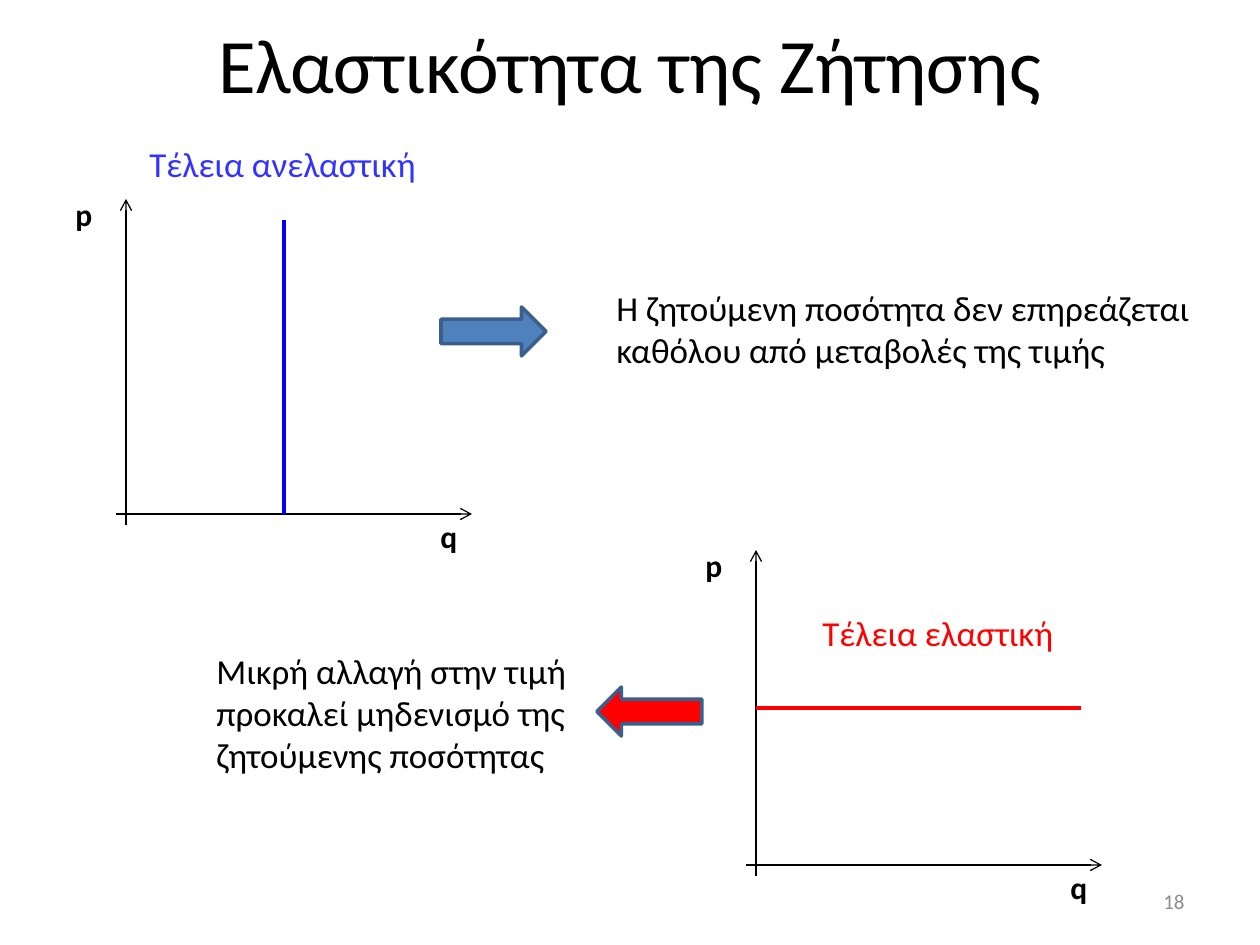
from dataclasses import dataclass

from lxml import etree
from pptx import Presentation
from pptx.dml.color import RGBColor
from pptx.enum.shapes import MSO_CONNECTOR, MSO_SHAPE
from pptx.enum.text import MSO_ANCHOR, PP_ALIGN
from pptx.oxml.ns import qn
from pptx.util import Emu, Pt

STRAIGHT = MSO_CONNECTOR.STRAIGHT
RIGHT_ARROW = MSO_SHAPE.RIGHT_ARROW
TOP, MIDDLE = MSO_ANCHOR.TOP, MSO_ANCHOR.MIDDLE
LEFT, CENTER, RIGHT = PP_ALIGN.LEFT, PP_ALIGN.CENTER, PP_ALIGN.RIGHT

PX_PER_INCH = 126
FONT = "Calibri"
COLORS = {
    "black": "000000",
    "grey": "8C8C8C",
    "curve_blue": "0000FF",
    "label_blue": "3333FF",
    "red": "FF0000",
    "arrow_blue": "4F81BD",
    "arrow_edge": "3A5F8C",
}


@dataclass(frozen=True)
class Label:
    text: str
    left: int
    top: int
    width: int
    height: int
    size: int = 20
    color: str = "black"
    bold: bool = False
    wrap: bool = True
    align: PP_ALIGN = LEFT
    anchor: MSO_ANCHOR = TOP


@dataclass(frozen=True)
class Line:
    start: tuple[int, int]
    end: tuple[int, int]
    color: str = "black"
    weight: float = 0.75
    arrow: bool = False


@dataclass(frozen=True)
class BlockArrow:
    left: int
    top: int
    color: str
    rotation: int = 0


ORIGINS = [(126, 514), (756, 865)]
CURVES = [
    Line((284, 220), (284, 514), "curve_blue", 2),
    Line((756, 708), (1081, 708), "red", 2),
]
LABELS = [
    Label("Τέλεια ανελαστική", 137, 136, 312, 55, color="label_blue"),
    Label("Τέλεια ελαστική", 810, 605, 272, 55, color="red"),
    Label("Μικρή αλλαγή στην τιμή προκαλεί μηδενισμό της ζητούμενης ποσότητας",
          204, 643, 393, 140),
    Label("Η ζητούμενη ποσότητα δεν επηρεάζεται καθόλου από μεταβολές της τιμής",
          604, 280, 684, 97),
    Label("Ελαστικότητα της Ζήτησης", 0, 0, 1260, 126, size=44,
          align=CENTER, anchor=MIDDLE),
    Label("18", 903, 876, 294, 50, size=12, color="grey",
          align=RIGHT, anchor=MIDDLE),
]
BLOCK_ARROWS = [
    BlockArrow(441, 307, "arrow_blue"),
    BlockArrow(597, 687, "red", 180),
]


def px(length: int) -> Emu:
    return Emu(round(length * 914400 / PX_PER_INCH))


def rgb(name: str) -> RGBColor:
    return RGBColor.from_string(COLORS[name])


def draw_label(page, label: Label) -> None:
    box = page.shapes.add_textbox(
        px(label.left), px(label.top), px(label.width), px(label.height))
    frame = box.text_frame
    frame.word_wrap = label.wrap
    frame.vertical_anchor = label.anchor
    frame.text = label.text
    para = frame.paragraphs[0]
    para.alignment = label.align
    font = para.runs[0].font
    font.name = FONT
    font.size = Pt(label.size)
    font.bold = label.bold
    font.color.rgb = rgb(label.color)


def draw_line(page, line: Line) -> None:
    connector = page.shapes.add_connector(
        STRAIGHT, *map(px, line.start + line.end))
    connector.line.color.rgb = rgb(line.color)
    connector.line.width = Pt(line.weight)
    if line.arrow:
        etree.SubElement(connector.line._get_or_add_ln(), qn("a:tailEnd"), type="arrow")
    etree.SubElement(connector._element.spPr, qn("a:effectLst"))


def draw_axes(page, origin: tuple[int, int]) -> None:
    """Draw the p and q axes, which cross at the origin, with their letters."""
    x, y = origin
    draw_line(page, Line((x, y + 11), (x, y - 315), arrow=True))
    draw_line(page, Line((x - 10, y), (x + 346, y), arrow=True))
    for letter, left, top in [("q", x + 302, y - 3), ("p", x - 63, y - 325)]:
        draw_label(page, Label(letter, left, top, 43, 50, size=18,
                               bold=True, wrap=False))


def draw_block_arrow(page, arrow: BlockArrow) -> None:
    shape = page.shapes.add_shape(
        RIGHT_ARROW, px(arrow.left), px(arrow.top), px(105), px(49))
    shape.rotation = arrow.rotation
    shape.shadow.inherit = False
    shape.fill.solid()
    shape.fill.fore_color.rgb = rgb(arrow.color)
    shape.line.color.rgb = rgb("arrow_edge")
    shape.line.width = Pt(2)


def main() -> None:
    deck = Presentation()
    deck.slide_width, deck.slide_height = px(1260), px(945)
    page = deck.slides.add_slide(deck.slide_layouts[6])
    for origin in ORIGINS:
        draw_axes(page, origin)
    for curve in CURVES:
        draw_line(page, curve)
    for label in LABELS:
        draw_label(page, label)
    for arrow in BLOCK_ARROWS:
        draw_block_arrow(page, arrow)
    deck.save("out.pptx")


if __name__ == "__main__":
    main()
